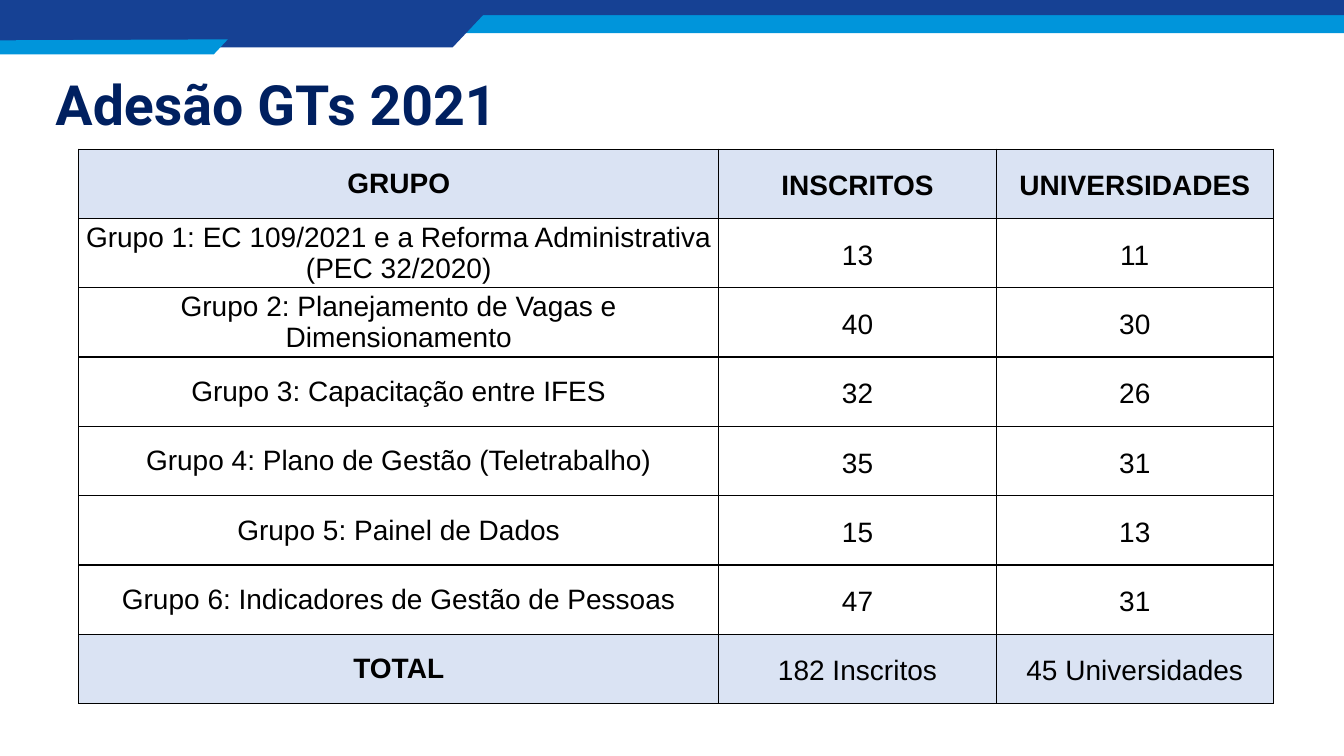
from lxml.etree import SubElement
from pptx import Presentation
from pptx.dml.color import RGBColor
from pptx.enum.shapes import MSO_SHAPE
from pptx.enum.text import MSO_ANCHOR, PP_ALIGN
from pptx.oxml.ns import qn
from pptx.util import Inches, Pt

HUES = {"navy": "164194", "cyan": "0095DB", "title": "002060",
        "pale": "DAE3F3", "black": "000000"}
ROWS = [
    ("GRUPO", "INSCRITOS", "UNIVERSIDADES"),
    ("Grupo 1: EC 109/2021 e a Reforma Administrativa (PEC 32/2020)", "13", "11"),
    ("Grupo 2: Planejamento de Vagas e Dimensionamento", "40", "30"),
    ("Grupo 3: Capacitação entre IFES", "32", "26"),
    ("Grupo 4: Plano de Gestão (Teletrabalho)", "35", "31"),
    ("Grupo 5: Painel de Dados", "15", "13"),
    ("Grupo 6: Indicadores de Gestão de Pessoas", "47", "31"),
    ("TOTAL", "182 Inscritos", "45 Universidades"),
]


def color(name):
    return RGBColor.from_string(HUES[name])


def paint(shape, hue):
    shape.shadow.inherit = False
    shape.fill.solid()
    shape.fill.fore_color.rgb = color(hue)
    shape.line.fill.background()


def write(para, text, font, size, hue, bold):
    run = para.add_run()
    run.text = text
    run.font.name = font
    run.font.size = Pt(size)
    run.font.bold = bold
    run.font.color.rgb = color(hue)


def add_band(slide, left, top, width):
    # Full-width stripes
    for high, hue in ((0.33, "cyan"), (0.15, "navy")):
        bar = slide.shapes.add_shape(MSO_SHAPE.RECTANGLE, Inches(left), Inches(top),
                                     Inches(width), Inches(high))
        paint(bar, hue)
    # Slanted tabs: upper right, upper left, lower left, lower right
    tabs = (
        ("navy", [(4.8, 0.14), (0, 0.14), (0, 0.47), (4.49, 0.47)]),
        ("cyan", [(2.26, 0.39), (0, 0.4), (0, 0.54), (2.12, 0.54)]),
    )
    for hue, spots in tabs:
        spots = [(Inches(left + x), Inches(top + y)) for x, y in spots]
        pen = slide.shapes.build_freeform(*spots[0])
        pen.add_line_segments(spots[1:], close=True)
        paint(pen.convert_to_shape(), hue)


def add_title(slide, left, top, width, height):
    title = slide.shapes.title
    title.left, title.top = Inches(left), Inches(top)
    title.width, title.height = Inches(width), Inches(height)
    frame = title.text_frame
    frame.word_wrap = True
    frame.vertical_anchor = MSO_ANCHOR.MIDDLE
    frame.margin_left = frame.margin_right = Inches(0.1)
    frame.margin_top = frame.margin_bottom = Inches(0.1)
    para = frame.paragraphs[0]
    para.alignment = PP_ALIGN.LEFT
    para.line_spacing = 0.9
    write(para, "Adesão GTs 2021", "Roboto", 39.6, "title", True)


def add_edges(cell):
    props = cell._tc.get_or_add_tcPr()
    for spot, side in enumerate(("lnL", "lnR", "lnT", "lnB")):
        edge = SubElement(props, qn("a:" + side), w=str(Pt(1)))
        fill = SubElement(edge, qn("a:solidFill"))
        SubElement(fill, qn("a:srgbClr"), val=HUES["black"])
        props.insert(spot, edge)


def add_grid(slide, left, top, width, height):
    frame = slide.shapes.add_table(len(ROWS), len(ROWS[0]), Inches(left), Inches(top),
                                   Inches(width), Inches(height))
    table = frame.table
    table.first_row = table.horz_banding = False
    count = 2.75
    for col, wide in zip(table.columns, (width - 2 * count, count, count)):
        col.width = Inches(wide)
    last = len(ROWS) - 1
    for r, row in enumerate(ROWS):
        for c, text in enumerate(row):
            cell = table.cell(r, c)
            cell.vertical_anchor = MSO_ANCHOR.MIDDLE
            cell.margin_left = cell.margin_right = Inches(0.07)
            cell.margin_top = cell.margin_bottom = 0
            # Shade the heading and total rows
            if r in (0, last):
                cell.fill.solid()
                cell.fill.fore_color.rgb = color("pale")
            else:
                cell.fill.background()
            add_edges(cell)
            para = cell.text_frame.paragraphs[0]
            para.alignment = PP_ALIGN.CENTER
            if c > 0:
                para.line_spacing = 1.15
            bold = r == 0 or (r == last and c == 0)
            write(para, text, "Arial", 20, "black", bold)


def main():
    deck = Presentation()
    deck.slide_width, deck.slide_height = Inches(13.33), Inches(7.5)
    slide = deck.slides.add_slide(deck.slide_layouts[5])
    add_band(slide, 0, 0, 13.33)
    add_title(slide, 0.45, 0.65, 12.42, 0.84)
    add_grid(slide, 0.78, 1.48, 11.85, 5.5)
    deck.save("out.pptx")


if __name__ == "__main__":
    main()
